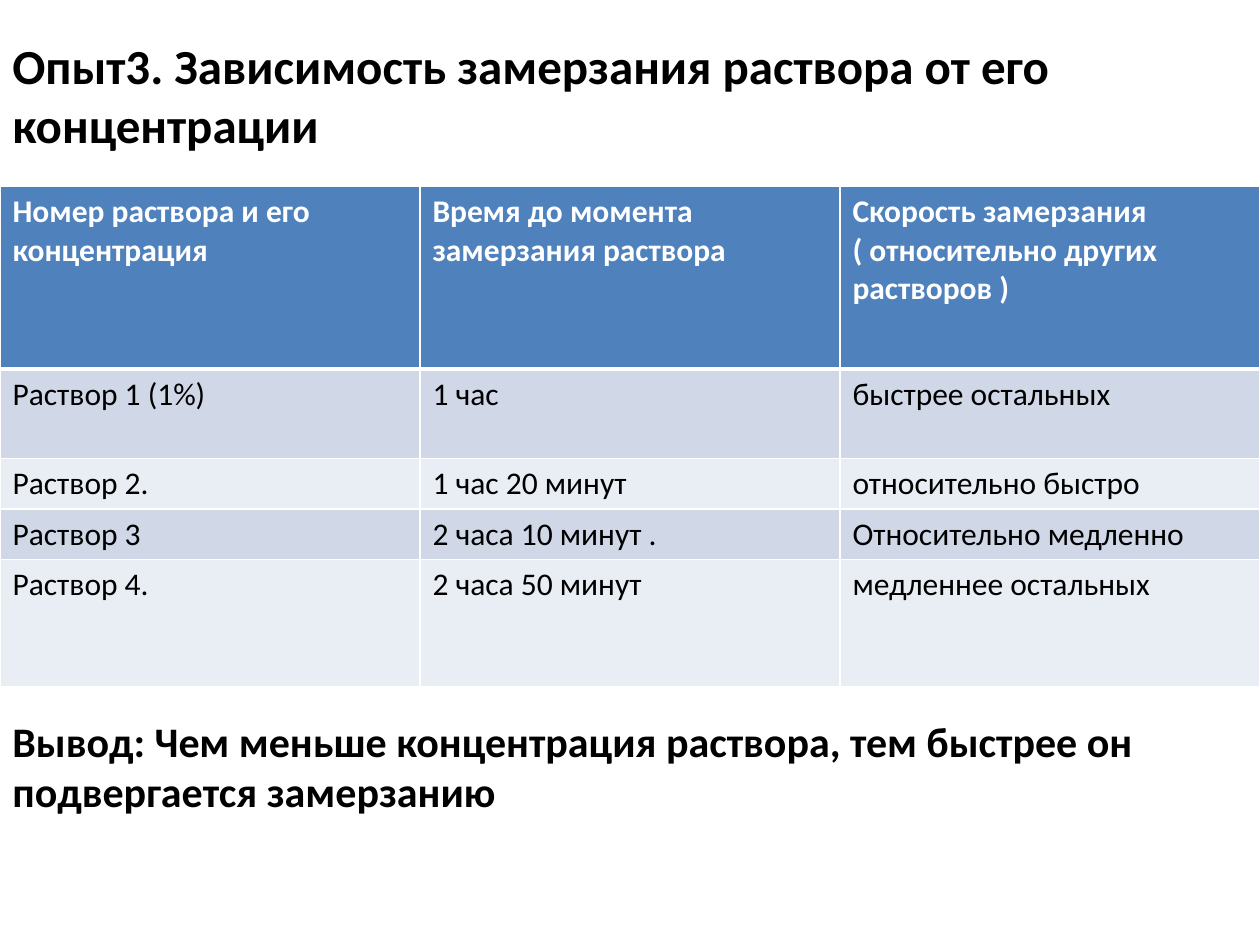
from lxml import etree
from pptx import Presentation
from pptx.dml.color import RGBColor
from pptx.oxml.ns import qn
from pptx.util import Inches, Pt

BLACK = RGBColor(0x00, 0x00, 0x00)
WHITE = RGBColor(0xFF, 0xFF, 0xFF)
HEADER_BLUE = RGBColor(0x4F, 0x81, 0xBD)
BAND_DARK = RGBColor(0xD0, 0xD8, 0xE8)
BAND_LIGHT = RGBColor(0xE9, 0xED, 0xF4)

ROWS = [
    ["Номер раствора и его концентрация", "Время до момента замерзания раствора",
     "Скорость замерзания ( относительно других растворов )"],
    ["Раствор 1 (1%)", "1 час", "быстрее остальных"],
    ["Раствор 2.", "1 час 20 минут", "относительно быстро"],
    ["Раствор 3", "2 часа 10 минут .", "Относительно медленно"],
    ["Раствор 4.", "2 часа 50 минут", "медленнее остальных"],
]
ROW_HEIGHTS = [1.45, 0.71, 0.4, 0.4, 1.01]


def write(tf, text, size=18, color=BLACK, bold=False):
    tf.word_wrap = True
    r = tf.paragraphs[0].add_run()
    r.text = text
    r.font.name = "Calibri"
    r.font.size = Pt(size)
    r.font.bold = bold
    r.font.color.rgb = color


def set_borders(cell, bottom):
    """Draw white cell borders, 1 pt except for the bottom one."""
    tc_pr = cell._tc.get_or_add_tcPr()
    sides = [("lnL", 1), ("lnR", 1), ("lnT", 1), ("lnB", bottom)]
    for i, (tag, width) in enumerate(sides):
        ln = etree.Element(qn(f"a:{tag}"), w=str(Pt(width)))
        fill = etree.SubElement(ln, qn("a:solidFill"))
        etree.SubElement(fill, qn("a:srgbClr"), val=str(WHITE))
        tc_pr.insert(i, ln)


prs = Presentation()
prs.slide_width = Inches(10)
prs.slide_height = Inches(7.5)
s = prs.slides.add_slide(prs.slide_layouts[6])

title = s.shapes.add_textbox(Inches(0), Inches(0.23), Inches(9.84), Inches(1.82))
write(title.text_frame, "Опыт3. Зависимость замерзания раствора от его концентрации",
      size=28, bold=True)

table = s.shapes.add_table(len(ROWS), 3, Inches(0), Inches(1.48),
                           Inches(10), Inches(sum(ROW_HEIGHTS))).table
for i, (texts, height) in enumerate(zip(ROWS, ROW_HEIGHTS)):
    header = i == 0
    table.rows[i].height = Inches(height)
    for j, text in enumerate(texts):
        cell = table.cell(i, j)
        cell.fill.solid()
        cell.fill.fore_color.rgb = (
            HEADER_BLUE if header else BAND_DARK if i % 2 else BAND_LIGHT)
        set_borders(cell, bottom=3 if header else 1)
        write(cell.text_frame, text, color=WHITE if header else BLACK, bold=header)

conclusion = s.shapes.add_textbox(Inches(0), Inches(5.63), Inches(10.39), Inches(0.91))
write(conclusion.text_frame,
      "Вывод: Чем меньше концентрация раствора, тем быстрее он подвергается замерзанию",
      size=24, bold=True)

prs.save("out.pptx")
